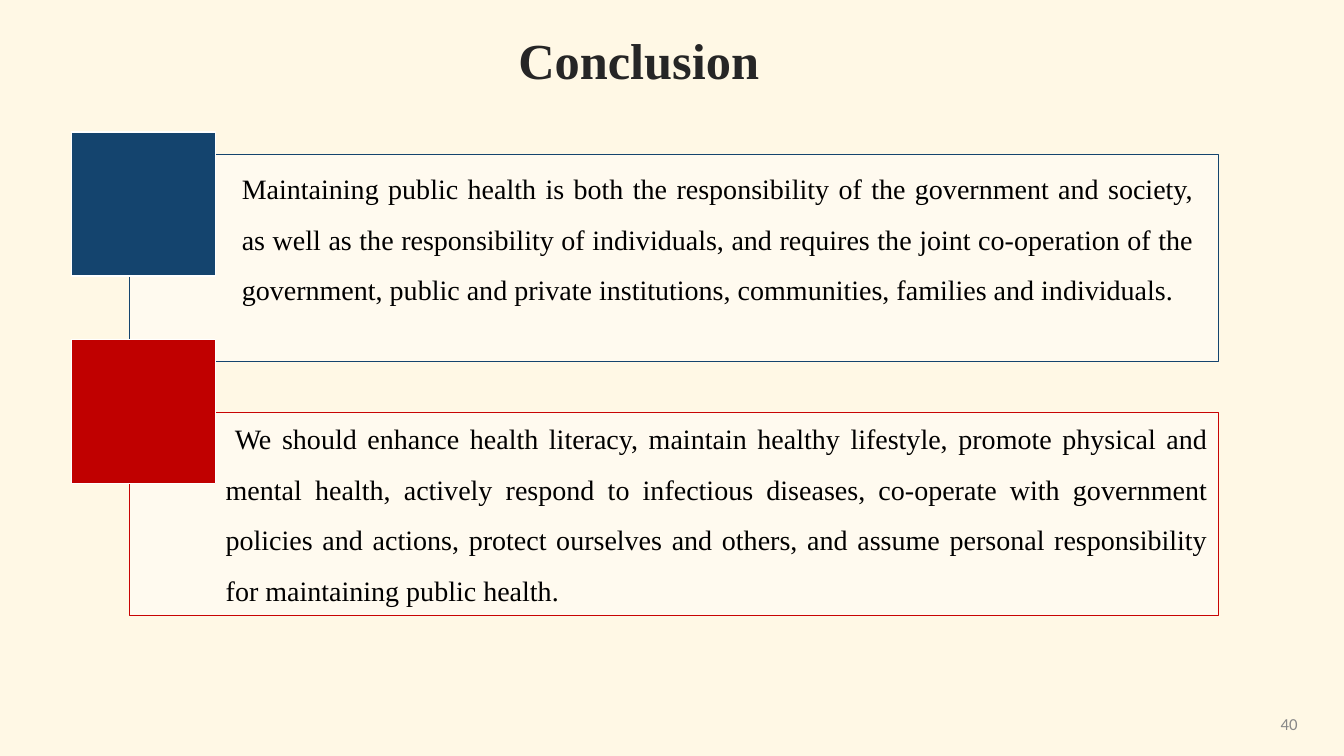
"""Build the conclusion slide with two framed statements."""
from pptx import Presentation
from pptx.dml.color import RGBColor
from pptx.enum import shapes, text
from pptx.oxml.ns import qn
from pptx.util import Inches, Pt
from lxml import etree

SERIF = "Times New Roman"
HEADING = "Conclusion"
PAGE_NUMBER = "40"
STATEMENTS = [
    {
        "words": "Maintaining public health is both the responsibility of the government "
                 "and society, as well as the responsibility of individuals, and requires "
                 "the joint co-operation of the government, public and private "
                 "institutions, communities, families and individuals.",
        "frame": (1.28, 1.53, 10.81, 2.06), "edge": "14446E",
        "marker": (0.71, 1.31, 1.43, 1.43), "accent": "14446E",
        "body": (2.3, 1.49, 9.64, 1.62), "indent": 0,
    },
    {
        "words": "We should enhance health literacy, maintain healthy lifestyle, promote "
                 "physical and mental health, actively respond to infectious diseases, "
                 "co-operate with government policies and actions, protect ourselves and "
                 "others, and assume personal responsibility for maintaining public health.",
        "frame": (1.28, 4.09, 10.81, 2.02), "edge": "C80404",
        "marker": (0.71, 3.37, 1.43, 1.43), "accent": "C00000",
        "body": (2.14, 3.97, 9.94, 2.12), "indent": 0.09,
    },
]
HEADING_FONT = {"name": SERIF, "size": Pt(36), "bold": True}
BODY_FONT = {"name": SERIF, "size": Pt(20)}
NUMBER_FONT = {"name": "Calibri", "size": Pt(12)}


def paint(color_format, hex_code):
    color_format.rgb = RGBColor.from_string(hex_code)


def apply(target, values):
    for attribute, value in values.items():
        setattr(target, attribute, value)


def add_box(slide, place, fill, edge, width, opacity=100):
    box = slide.shapes.add_shape(shapes.MSO_SHAPE.RECTANGLE, *map(Inches, place))
    box.shadow.inherit = False
    box.fill.solid()
    paint(box.fill.fore_color, fill)
    if opacity < 100:
        shade = box.fill._xPr.find(qn("a:solidFill"))[0]
        etree.SubElement(shade, qn("a:alpha")).set("val", str(opacity * 1000))
    paint(box.line.color, edge)
    box.line.width = Pt(width)


def write(holder, words, font, color, align, anchor=text.MSO_ANCHOR.TOP, **layout):
    frame = holder.text_frame
    apply(frame, {"word_wrap": True, "auto_size": text.MSO_AUTO_SIZE.NONE,
                  "vertical_anchor": anchor, "text": words})
    paragraph = frame.paragraphs[0]
    apply(paragraph, {"alignment": align, **layout})
    run = paragraph.runs[0]
    apply(run.font, font)
    paint(run.font.color, color)
    return paragraph


def main():
    deck = Presentation()
    apply(deck, {"slide_width": Inches(13.33), "slide_height": Inches(7.5)})
    slide = deck.slides.add_slide(deck.slide_layouts[5])
    slide.background.fill.solid()
    paint(slide.background.fill.fore_color, "FFF8E5")

    heading = slide.shapes.title
    apply(heading, {"left": Inches(5.04), "top": Inches(0.24),
                    "width": Inches(5.74), "height": Inches(0.71)})
    write(heading, HEADING, HEADING_FONT, "262626", text.PP_ALIGN.LEFT)

    for statement in STATEMENTS:
        add_box(slide, statement["frame"], "FFFFFF", statement["edge"], 0.75, opacity=40)
        add_box(slide, statement["marker"], statement["accent"], "FFFFFF", 1)

    for statement in STATEMENTS:
        body = slide.shapes.add_textbox(*map(Inches, statement["body"]))
        paragraph = write(body, statement["words"], BODY_FONT, "000000",
                          text.PP_ALIGN.JUSTIFY, line_spacing=1.5)
        if statement["indent"]:
            paragraph._p.get_or_add_pPr().set("indent", str(Inches(statement["indent"])))

    number = slide.shapes.add_textbox(*map(Inches, (9.97, 6.98, 3, 0.4)))
    write(number, PAGE_NUMBER, NUMBER_FONT, "888888", text.PP_ALIGN.RIGHT,
          text.MSO_ANCHOR.MIDDLE)
    deck.save("out.pptx")


if __name__ == "__main__":
    main()
